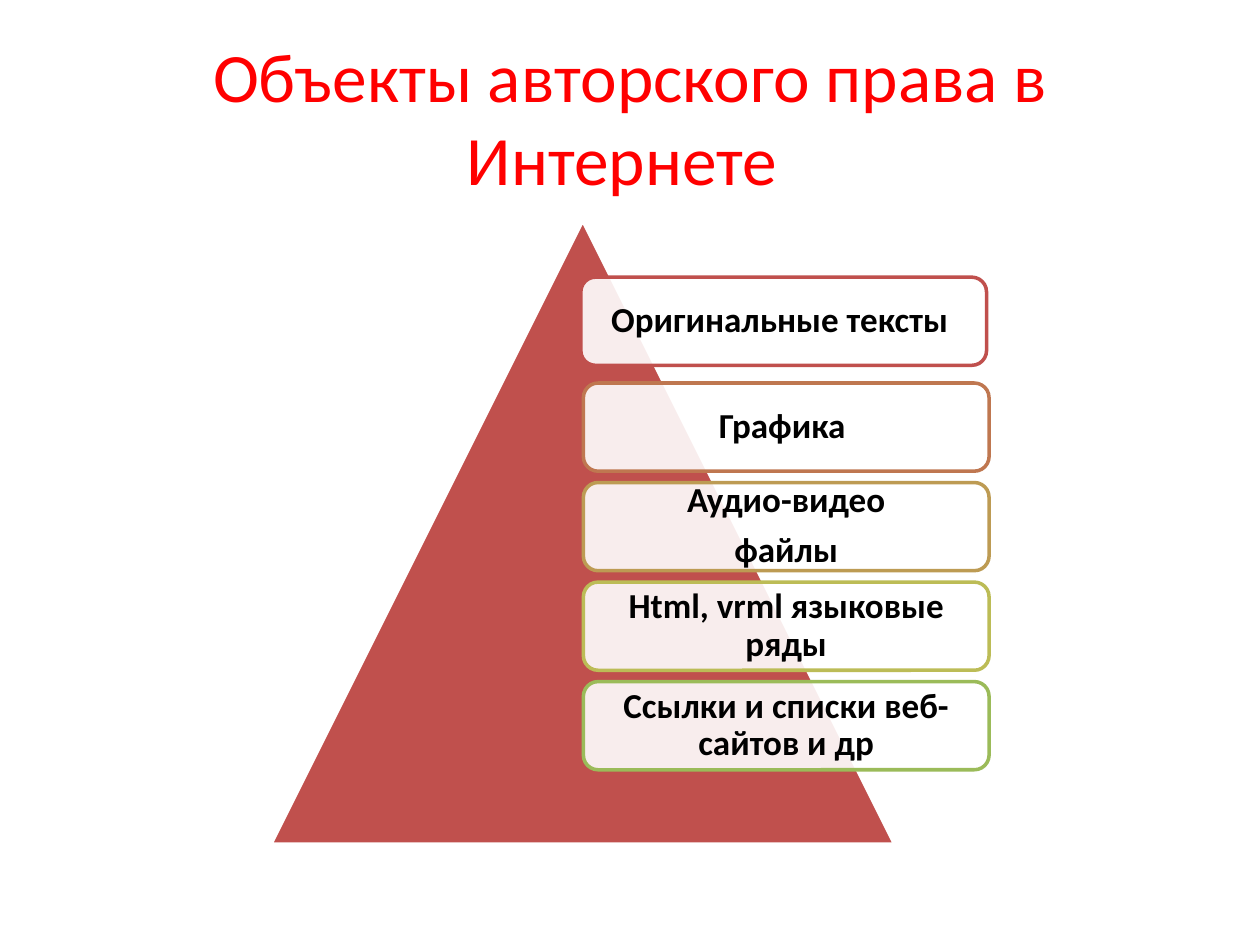
"""Builds a slide on the objects of copyright on the Internet."""
from dataclasses import dataclass

from lxml.etree import SubElement
from pptx import Presentation
from pptx.dml.color import RGBColor
from pptx.enum.shapes import MSO_SHAPE as Shape
from pptx.enum.text import MSO_ANCHOR as Anchor, PP_ALIGN as Align
from pptx.oxml.ns import qn
from pptx.util import Inches, Pt

BOX_W, BOX_H = 3.22, 0.7
BOX_LEFT, BOX_TOP, BOX_STEP = 4.63, 3.04, 0.79
INSET = Inches(0.08)
FRAME = {"margin_left": INSET, "margin_right": INSET, "margin_top": INSET,
         "margin_bottom": INSET, "word_wrap": True, "vertical_anchor": Anchor.MIDDLE}
PARAGRAPH = {"alignment": Align.CENTER, "line_spacing": 0.9, "space_after": Pt(7)}
LABEL_FONT = {"name": "Calibri", "size": Pt(20), "bold": True}
TITLE_FONT = {"name": "Calibri", "size": Pt(39.6)}


@dataclass
class Box:
    text: str
    line: str
    left: float
    top: float


def rgb(color: str) -> RGBColor:
    return RGBColor.from_string(color)


def apply(target, values: dict) -> None:
    for name, value in values.items():
        setattr(target, name, value)


def add_shape(shapes, kind: Shape, at: tuple, fill: str, line: str):
    sp = shapes.add_shape(kind, *map(Inches, at))
    sp.shadow.inherit = False
    sp.fill.solid()
    sp.fill.fore_color.rgb = rgb(fill)
    sp.line.color.rgb = rgb(line)
    sp.line.width = Pt(2)
    return sp


def add_text(p, text: str, font: dict, color: str) -> None:
    r = p.add_run()
    r.text = text
    apply(r.font, font)
    r.font.color.rgb = rgb(color)


def add_box(shapes, box: Box) -> None:
    sp = add_shape(shapes, Shape.ROUNDED_RECTANGLE,
                   (box.left, box.top, BOX_W, BOX_H), "FFFFFF", box.line)
    fill_color = sp.fill._xPr.find(qn("a:solidFill"))[0]
    SubElement(fill_color, qn("a:alpha"), val="90000")
    tf = sp.text_frame
    apply(tf, FRAME)
    for i, text in enumerate(box.text.split("\n")):
        p = tf.add_paragraph() if i else tf.paragraphs[0]
        apply(p, PARAGRAPH)
        add_text(p, text, LABEL_FONT, "000000")


def main() -> None:
    prs = Presentation()
    prs.slide_width, prs.slide_height = Inches(10), Inches(7.5)
    s = prs.slides.add_slide(prs.slide_layouts[5])

    title = s.shapes.title
    apply(title, {"left": Inches(0.5), "top": Inches(0.3),
                  "width": Inches(9), "height": Inches(1.25)})
    title.text_frame.vertical_anchor = Anchor.MIDDLE
    p = title.text_frame.paragraphs[0]
    p.alignment = Align.CENTER
    add_text(p, "Объекты авторского права в Интернете ", TITLE_FONT, "FF0000")

    pyramid = s.shapes.add_group_shape().shapes
    add_shape(pyramid, Shape.ISOSCELES_TRIANGLE, (2.15, 1.75, 4.95, 4.95),
              "C0504D", "FFFFFF")
    add_box(pyramid, Box("Оригинальные тексты ", "C0504D", 4.61, 2.2))
    labels = [("Графика ", "BF7750"),
              ("Аудио-видео\nфайлы", "BD9B53"),
              ("Html, vrml языковые ряды", "BCBC56"),
              ("Ссылки и списки веб-сайтов и др", "9BBB59")]
    for i, (text, line) in enumerate(labels):
        add_box(pyramid, Box(text, line, BOX_LEFT, BOX_TOP + i * BOX_STEP))

    prs.save("out.pptx")


if __name__ == "__main__":
    main()
